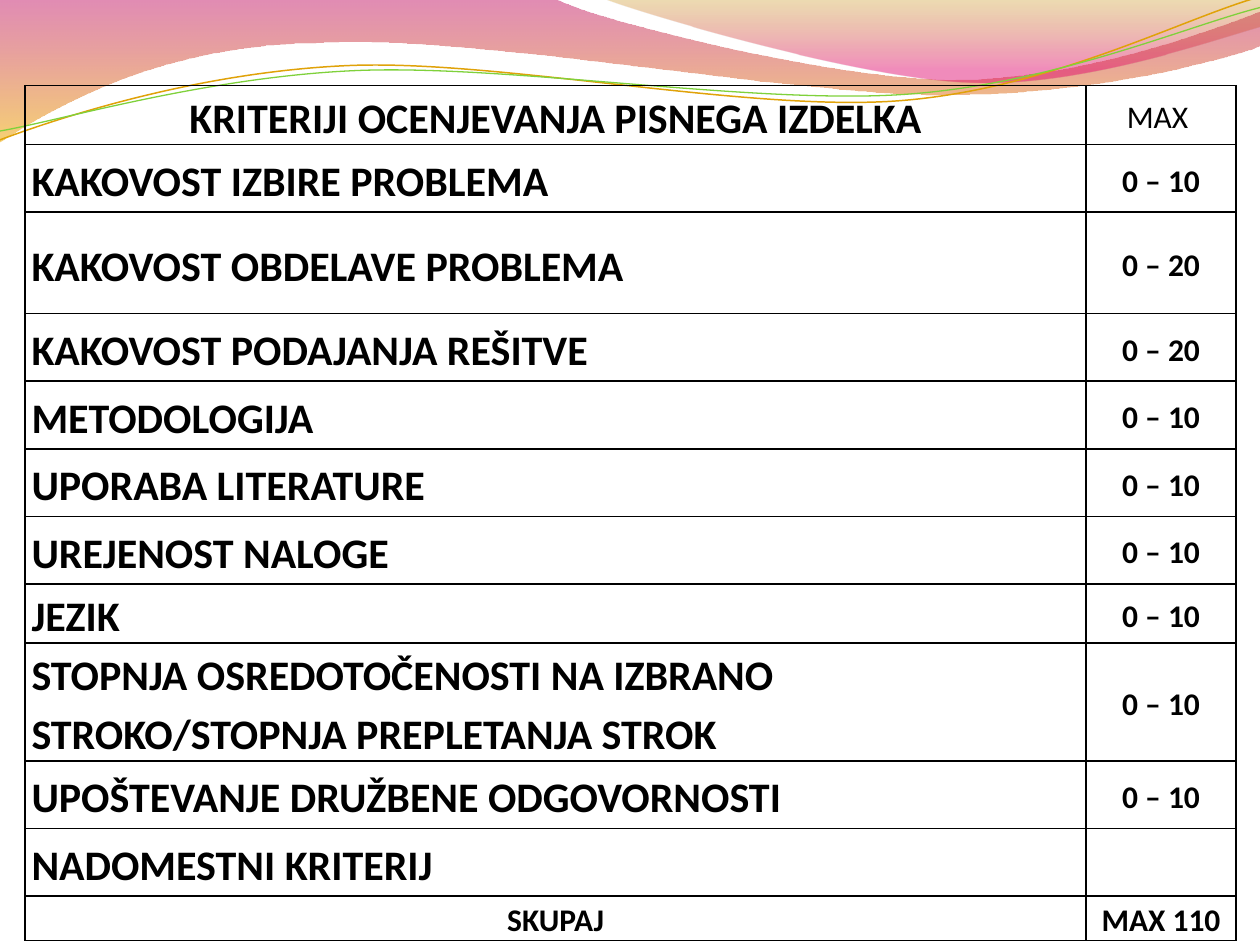
import dataclasses
import math
import typing

import lxml.etree
import pptx
import pptx.dml.color
import pptx.enum.text
import pptx.oxml.ns
import pptx.util

Inches = pptx.util.Inches
Pt = pptx.util.Pt
RGB = pptx.dml.color.RGBColor.from_string
qn = pptx.oxml.ns.qn
ALIGN = pptx.enum.text.PP_ALIGN

Point = tuple[float, float]
Segment = tuple[Point, ...]


@dataclasses.dataclass(frozen=True)
class Theme:
    font: str = "Calibri"
    ink: str = "000000"
    magenta: str = "BD0059"
    amber: str = "F0AB00"
    ochre: str = "C38B00"
    pink: str = "E1006B"
    gold: str = "E0A209"
    green: str = "7FD13B"
    large: int = 24
    small: int = 18
    spacing: float = 1.15
    border: int = 1


THEME = Theme()
ROW_MODULE = 1.61
STRAND_TILT = -2.7
STRAND_CENTER = (4.99, 0.58)


class Stop(typing.NamedTuple):
    position: float
    color: str
    opacity: int


class Wave(typing.NamedTuple):
    start: Point
    segments: list[Segment]
    stops: tuple[Stop, Stop]


class Strand(typing.NamedTuple):
    start: Point
    segments: list[Segment]
    color: str
    width: float


class Criterion(typing.NamedTuple):
    label: str
    points: str
    height: float = ROW_MODULE / 3
    label_size: int = THEME.large
    centered: bool = False
    points_bold: bool = True


WAVES = [
    Wave(
        (0, -0.01),
        [
            ((4.4, -0.01),),
            ((4.76, 0.17), (6.64, 0.63), (7.58, 0.63)),
            ((8.53, 0.63), (9.58, 0.26), (10, 0.09)),
            ((10.01, 0.36),),
            ((9.83, 0.44), (8.7, 0.76), (7.46, 0.75)),
            ((6.22, 0.75), (3.82, 0.28), (2.57, 0.34)),
            ((1.29, 0.35), (0.46, 0.83), (-0.01, 1.13)),
            ((0, -0.01),),
        ],
        (Stop(0, THEME.magenta, 45), Stop(1, THEME.amber, 55)),
    ),
    Wave(
        (4.79, -0.01),
        [
            ((5.09, 0.11), (6.82, 0.62), (7.69, 0.65)),
            ((8.56, 0.69), (9.61, 0.32), (10, 0.21)),
            ((10, 0),),
            ((4.79, -0.01),),
        ],
        (Stop(0, THEME.ochre, 30), Stop(0.8, THEME.pink, 45)),
    ),
]

STRANDS = [
    Strand(
        (0, 1.11),
        [
            ((0.48, 0.93), (1.58, 0.57), (2.77, 0.52)),
            ((3.95, 0.47), (5.93, 0.89), (7.13, 0.8)),
            ((8.33, 0.71), (9.38, 0.15), (9.98, -0.02)),
        ],
        THEME.gold,
        0.85,
    ),
    Strand(
        (0, 1.04),
        [
            ((0.47, 0.96), (1.64, 0.61), (2.83, 0.56)),
            ((4.03, 0.51), (5.97, 0.83), (7.17, 0.75)),
            ((8.36, 0.67), (9.41, 0.21), (10, 0.06)),
        ],
        THEME.green,
        0.75,
    ),
]

CRITERIA = [
    Criterion("KRITERIJI OCENJEVANJA PISNEGA IZDELKA", "MAX ", 0.43, centered=True, points_bold=False),
    Criterion("KAKOVOST IZBIRE PROBLEMA", "0 – 10"),
    Criterion("KAKOVOST OBDELAVE PROBLEMA", "0 – 20", ROW_MODULE / 2),
    Criterion("KAKOVOST PODAJANJA REŠITVE", "0 – 20"),
    Criterion("METODOLOGIJA", "0 – 10"),
    Criterion("UPORABA LITERATURE", "0 – 10"),
    Criterion("UREJENOST NALOGE", "0 – 10"),
    Criterion("JEZIK", "0 – 10", 0.43),
    Criterion("STOPNJA OSREDOTOČENOSTI NA IZBRANO STROKO/STOPNJA PREPLETANJA STROK", "0 – 10", 0.86),
    Criterion("UPOŠTEVANJE DRUŽBENE ODGOVORNOSTI", "0 – 10"),
    Criterion("NADOMESTNI KRITERIJ", ""),
    Criterion("SKUPAJ", "MAX 110", 0.32, THEME.small, centered=True),
]


def draw_outline(shapes, start: Point, segments: list[Segment], close: bool):
    first, *rest = [(Inches(x), Inches(y)) for x, y in (start, *(p for seg in segments for p in seg))]
    builder = shapes.build_freeform(*first)
    builder.add_line_segments(rest, close=close)
    sp = builder.convert_to_shape()
    sp.shadow.inherit = False
    lines = iter(list(sp._element.iter(qn("a:lnTo"))))
    for segment in segments:
        group = [next(lines) for _ in segment]
        if len(group) == 3:
            curve = lxml.etree.Element(qn("a:cubicBezTo"))
            group[0].addprevious(curve)
            for line in group:
                curve.append(line[0])
                line.getparent().remove(line)
    return sp


def draw_wave(shapes, wave: Wave) -> None:
    sp = draw_outline(shapes, wave.start, wave.segments, True)
    sp.line.fill.background()
    sp.fill.gradient()
    sp.fill.gradient_angle = 270
    for target, stop in zip(sp.fill.gradient_stops, wave.stops):
        target.position = stop.position
        target.color.rgb = RGB(stop.color)
    for color, stop in zip(sp._element.spPr.iter(qn("a:srgbClr")), wave.stops):
        lxml.etree.SubElement(color, qn("a:alpha"), val=str(stop.opacity * 1000))


def level(point: Point) -> Point:
    angle = math.radians(-STRAND_TILT)
    cx, cy = STRAND_CENTER
    dx, dy = point[0] - cx, point[1] - cy
    return (
        cx + dx * math.cos(angle) - dy * math.sin(angle),
        cy + dx * math.sin(angle) + dy * math.cos(angle),
    )


def draw_strand(shapes, strand: Strand) -> None:
    segments = [tuple(level(p) for p in segment) for segment in strand.segments]
    sp = draw_outline(shapes, level(strand.start), segments, False)
    sp.rotation = STRAND_TILT
    sp.fill.background()
    sp.line.color.rgb = RGB(strand.color)
    sp.line.width = Pt(strand.width)


def add_borders(cell) -> None:
    tc_pr = cell._tc.get_or_add_tcPr()
    for i, side in enumerate(("lnL", "lnR", "lnT", "lnB")):
        ln = lxml.etree.Element(qn(f"a:{side}"), w=str(Pt(THEME.border)))
        solid = lxml.etree.SubElement(ln, qn("a:solidFill"))
        lxml.etree.SubElement(solid, qn("a:srgbClr"), val=THEME.ink)
        tc_pr.insert(i, ln)


def fill_cell(cell, text: str, size: int, centered: bool, bold: bool = True) -> None:
    cell.fill.background()
    add_borders(cell)
    cell.vertical_anchor = pptx.enum.text.MSO_ANCHOR.MIDDLE
    cell.margin_left = cell.margin_right = Inches(0.05)
    cell.margin_top = cell.margin_bottom = 0
    if not text:
        return
    p = cell.text_frame.paragraphs[0]
    p.alignment = ALIGN.CENTER if centered else ALIGN.LEFT
    p.line_spacing = THEME.spacing
    r = p.add_run()
    r.text = text
    r.font.name = THEME.font
    r.font.size = Pt(size)
    r.font.bold = bold
    r.font.color.rgb = RGB(THEME.ink)


def draw_criteria(shapes, criteria: list[Criterion]) -> None:
    frame = shapes.add_table(len(criteria), 2, Inches(0.2), Inches(0.68), Inches(9.61), Inches(6.75))
    table = frame.table
    table.first_row = table.horz_banding = False
    for column, width in zip(table.columns, (8.42, 1.19)):
        column.width = Inches(width)
    for row, c in zip(table.rows, criteria):
        row.height = Inches(c.height)
        fill_cell(row.cells[0], c.label, c.label_size, c.centered)
        fill_cell(row.cells[1], c.points, THEME.small, True, c.points_bold)


def main() -> None:
    prs = pptx.Presentation()
    prs.slide_width, prs.slide_height = Inches(10), Inches(7.5)
    s = prs.slides.add_slide(prs.slide_layouts[6])
    for wave in WAVES:
        draw_wave(s.shapes, wave)
    strands = s.shapes.add_group_shape().shapes
    for strand in STRANDS:
        draw_strand(strands, strand)
    draw_criteria(s.shapes, CRITERIA)
    prs.save("out.pptx")


if __name__ == "__main__":
    main()
